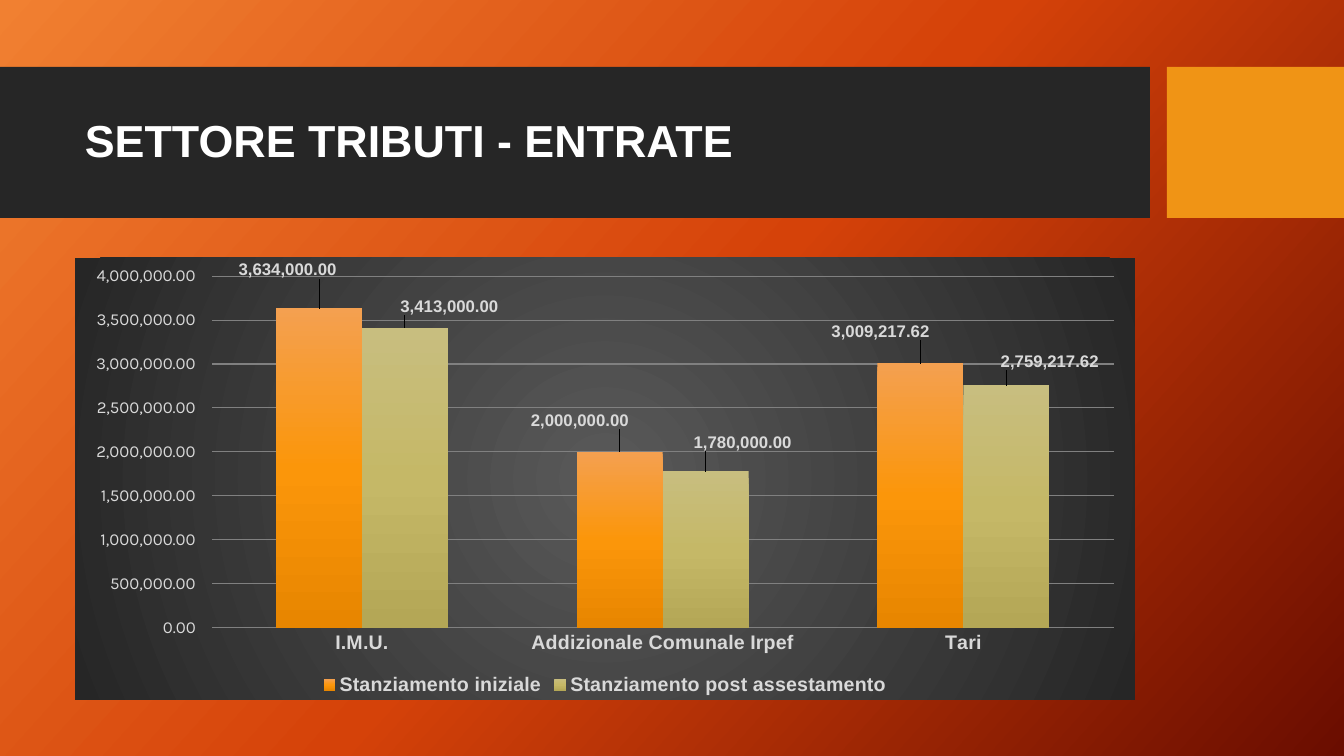
from pptx import Presentation
from pptx.chart.data import CategoryChartData
from pptx.dml.color import RGBColor
from pptx.enum.chart import XL_CHART_TYPE as CT, XL_LABEL_POSITION as LP
from pptx.enum.chart import XL_LEGEND_POSITION as LEG, XL_TICK_MARK as TICK
from pptx.enum.shapes import MSO_SHAPE
from pptx.enum.text import MSO_ANCHOR
from pptx.oxml import parse_xml
from pptx.oxml.ns import nsdecls
from pptx.util import Pt

PX = 914400 / 100.8
WHITE = RGBColor(0xFF, 0xFF, 0xFF)
LIGHT = RGBColor(0xD9, 0xD9, 0xD9)
GRID = RGBColor(0x80, 0x80, 0x80)
DARK = RGBColor(0x26, 0x26, 0x26)
GREY = RGBColor(0x59, 0x59, 0x59)
ORANGE = RGBColor(0xF0, 0x94, 0x15)
BACKDROP = [RGBColor(0xF1, 0x80, 0x31), RGBColor(0xD5, 0x42, 0x09), RGBColor(0x6A, 0x0D, 0x00)]
INITIAL = [RGBColor(0xF4, 0xA0, 0x50), RGBColor(0xFB, 0x96, 0x0A), RGBColor(0xE8, 0x86, 0x00)]
ADJUSTED = [RGBColor(0xC8, 0xBE, 0x7F), RGBColor(0xC5, 0xB8, 0x67), RGBColor(0xB4, 0xA7, 0x56)]
EURO = '#,##0.00\\ _€'
CHART_BOX = (75, 258, 1060, 442)


def px(*lengths):
    return [round(n * PX) for n in lengths]


def gradient(colors, angle=None):
    step = 100000 // (len(colors) - 1)
    stops = ''.join(f'<a:gs pos="{i * step}"><a:srgbClr val="{c}"/></a:gs>'
                    for i, c in enumerate(colors))
    if angle is None:
        way = ('<a:path path="circle"><a:fillToRect l="50000" t="50000" '
               'r="50000" b="50000"/></a:path>')
    else:
        way = f'<a:lin ang="{angle * 60000}" scaled="0"/>'
    return parse_xml(f'<a:gradFill {nsdecls("a")} rotWithShape="1">'
                     f'<a:gsLst>{stops}</a:gsLst>{way}</a:gradFill>')


prs = Presentation()
prs.slide_width, prs.slide_height = px(1344, 756)
s = prs.slides.add_slide(prs.slide_layouts[6])
s.background.fill.solid()
solid = s.element.xpath('.//p:bgPr/a:solidFill')[0]
solid.getparent().replace(solid, gradient(BACKDROP, 42))

for left, width, color in [(0, 1150, DARK), (1167, 177, ORANGE)]:
    sp = s.shapes.add_shape(MSO_SHAPE.RECTANGLE, *px(left, 67, width, 151))
    sp.shadow.inherit = False
    sp.fill.solid()
    sp.fill.fore_color.rgb = color
    sp.line.fill.background()

tf = s.shapes.add_textbox(*px(75, 83, 1060, 119)).text_frame
tf.word_wrap = True
tf.vertical_anchor = MSO_ANCHOR.MIDDLE
p = tf.paragraphs[0]
p.text = 'SETTORE TRIBUTI - ENTRATE'
p.line_spacing = 0.9
font = p.runs[0].font
font.name, font.size, font.bold = 'Arial', Pt(32), True
font.color.rgb = WHITE

data = CategoryChartData()
data.categories = ['I.M.U.', 'Addizionale Comunale Irpef', 'Tari']
data.add_series('Stanziamento iniziale', [3634000, 2000000, 3009217.62])
data.add_series('Stanziamento post assestamento', [3413000, 1780000, 2759217.62])
chart = s.shapes.add_chart(CT.COLUMN_CLUSTERED, *px(*CHART_BOX), data).chart
chart.has_title = False
chart.font.name, chart.font.size = 'Karla', Pt(10)
chart.font.color.rgb = WHITE
chart.has_legend = True
chart.legend.position = LEG.BOTTOM
chart.legend.include_in_layout = False

cat, val = chart.category_axis, chart.value_axis
for axis in (cat, val):
    axis.major_tick_mark = axis.minor_tick_mark = TICK.NONE
    axis.format.line.fill.background()
val.minimum_scale, val.maximum_scale, val.major_unit = 0, 4000000, 500000
val.tick_labels.number_format = EURO
val.tick_labels.number_format_is_linked = False
val.has_major_gridlines = True
val.major_gridlines.format.line.color.rgb = GRID
val.major_gridlines.format.line.width = Pt(0.75)

plot = chart.plots[0]
plot.gap_width, plot.overlap = 150, 0
plot.vary_by_categories = False
fonts = [(cat.tick_labels.font, 'Arial', 14, True), (val.tick_labels.font, 'Karla', 12, False),
         (chart.legend.font, 'Arial', 14, True)]
looks = [(INITIAL, EURO, [(-24, -25), (-33, -18), (-33, -19)]),
         (ADJUSTED, '#,##0.00', [(44, -8), (37, -16), (43, -11)])]
for ser, (colors, fmt, shifts) in zip(plot.series, looks):
    ser.invert_if_negative = False
    ser.format.fill.solid()
    labels = ser.data_labels
    labels.show_value = True
    labels.number_format, labels.number_format_is_linked = fmt, False
    labels.position = LP.OUTSIDE_END
    fonts.append((labels.font, 'Arial', 12, True))
    for i, (dx, dy) in enumerate(shifts):
        label = ser.points[i].data_label
        label.position = LP.OUTSIDE_END
        fonts.append((label.font, 'Arial', 12, True))
        dLbl = chart.element.xpath(f'.//c:ser[c:idx/@val="{ser.index}"]//c:dLbl[c:idx/@val="{i}"]')[0]
        dLbl.insert(1, parse_xml(
            f'<c:layout {nsdecls("c")}><c:manualLayout><c:x val="{dx / CHART_BOX[2]:.3f}"/>'
            f'<c:y val="{dy / CHART_BOX[3]:.3f}"/></c:manualLayout></c:layout>'))
        dLbl.insert(2, parse_xml(
            f'<c:numFmt {nsdecls("c")} formatCode="{fmt}" sourceLinked="0"/>'))
    solid = chart.element.xpath(f'.//c:ser[c:idx/@val="{ser.index}"]/c:spPr/a:solidFill')[0]
    solid.getparent().replace(solid, gradient(colors, 90))

for font, name, size, bold in fonts:
    font.name, font.size, font.bold = name, Pt(size), bold
    font.color.rgb = LIGHT

area = chart.element.xpath('c:chart/c:plotArea')[0]
for layout in area.xpath('c:layout'):
    area.remove(layout)
frame = zip('xywh', (137, 18, 902, 352), CHART_BOX[2:] * 2)
sides = ''.join(f'<c:{k} val="{n / full:.3f}"/>' for k, n, full in frame)
area.insert(0, parse_xml(
    f'<c:layout {nsdecls("c")}><c:manualLayout><c:layoutTarget val="inner"/>'
    f'<c:xMode val="edge"/><c:yMode val="edge"/>{sides}</c:manualLayout></c:layout>'))

spPr = parse_xml(f'<c:spPr {nsdecls("c", "a")}><a:ln><a:noFill/></a:ln></c:spPr>')
spPr.insert(0, gradient([GREY, DARK]))
chart.element.xpath('c:chart')[0].addnext(spPr)

prs.save("out.pptx")
